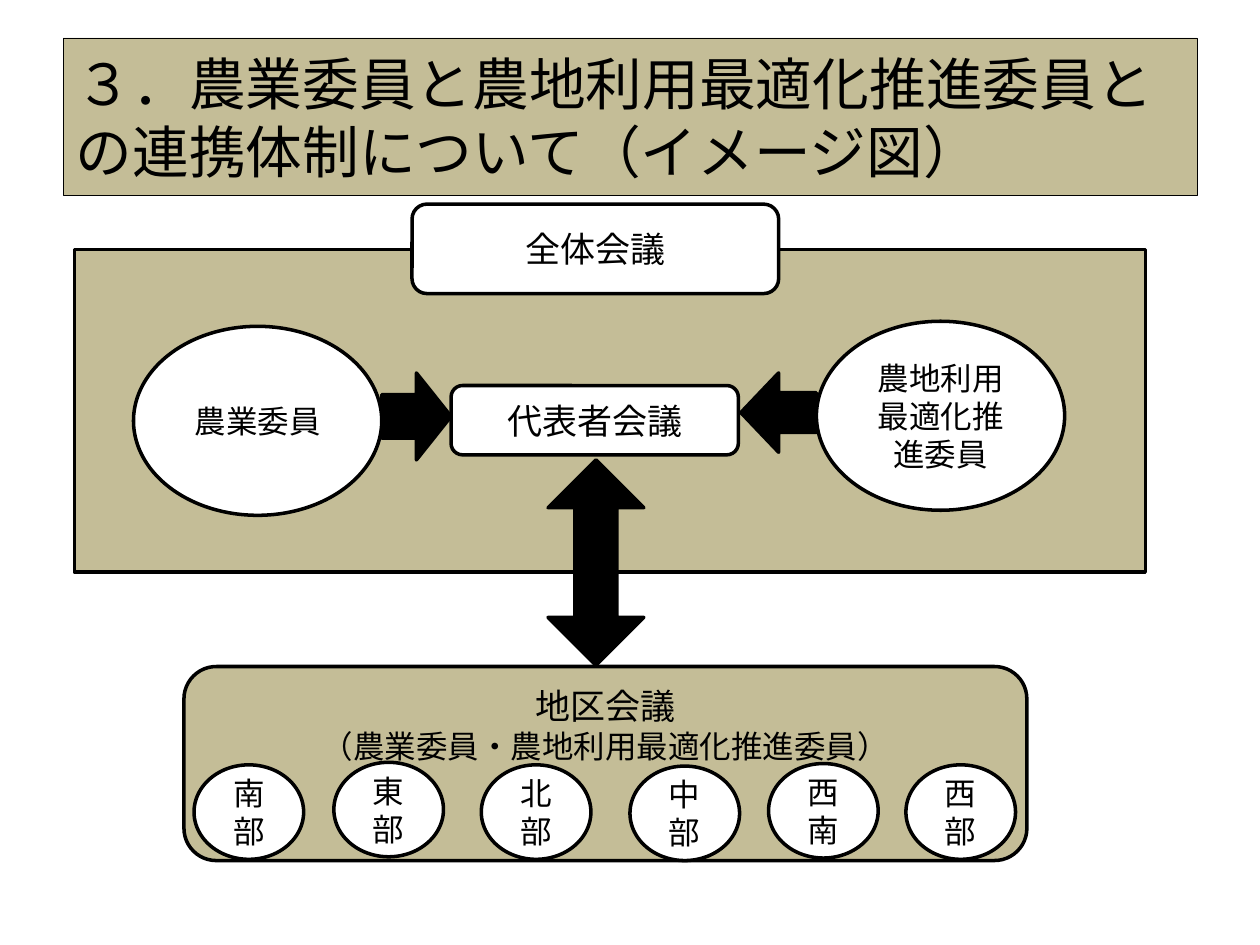
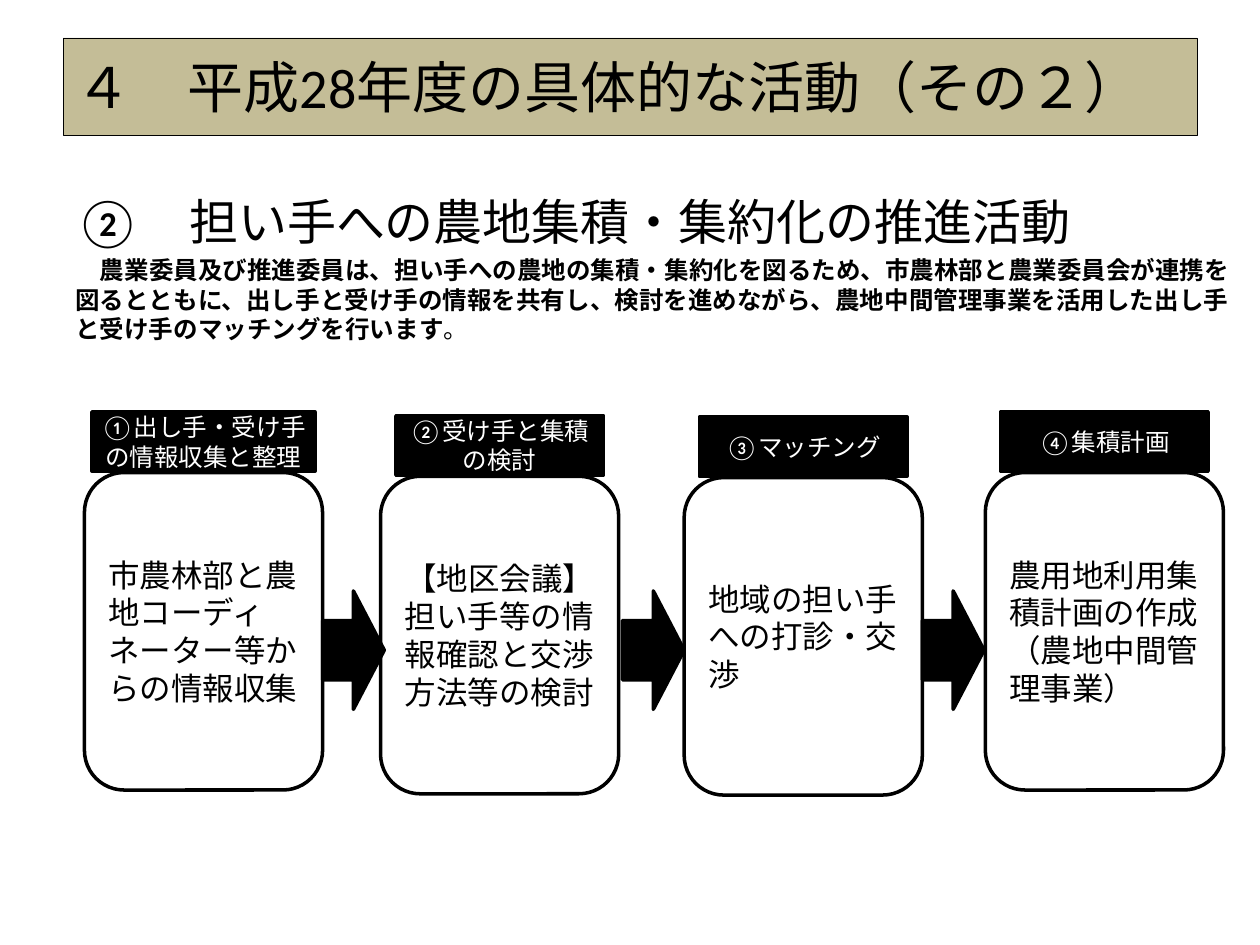
from dataclasses import dataclass

from lxml.etree import SubElement
from pptx import Presentation
from pptx.dml.color import RGBColor
from pptx.enum.lang import MSO_LANGUAGE_ID as Language
from pptx.enum.shapes import MSO_SHAPE as Preset
from pptx.enum.text import MSO_ANCHOR as Anchor, MSO_AUTO_SIZE as AutoSize, PP_ALIGN as Align
from pptx.oxml.ns import qn
from pptx.util import Inches, Pt


@dataclass(frozen=True)
class Theme:
    khaki = RGBColor(0xC4, 0xBD, 0x97)
    black = RGBColor(0, 0, 0)
    white = RGBColor(0xFF, 0xFF, 0xFF)
    latin_font = "Calibri"
    gothic_font = "Noto Sans CJK JP"
    title_line = 0.25
    shape_line = 2
    title_size = 32
    heading_size = 28
    meeting_size = 20
    text_size = 18
    note_size = 14


theme = Theme()
presentation = Presentation()
presentation.slide_width, presentation.slide_height = Inches(10), Inches(7.5)
# The grid has 100 columns and 75 rows of square cells.
CELL = presentation.slide_width // 100


def format_text(paragraph, size, color=theme.black, font=theme.latin_font, align=Align.CENTER):
    paragraph.alignment = align
    for run in paragraph.runs:
        run.font.name = font
        run.font.size = Pt(size)
        run.font.color.rgb = color
        run.font.language_id = Language.JAPANESE
        east_asian = SubElement(run.font._element, qn("a:ea"))
        east_asian.set("typeface", theme.latin_font)


def add_block(slide, preset, box, fill=theme.white, text="", size=theme.text_size,
              **text_style):
    """Draw an outlined preset shape; box is left, top, width, height in grid cells."""
    shape = slide.shapes.add_shape(preset, *[int(cells * CELL) for cells in box])
    shape.shadow.inherit = False
    shape.fill.solid()
    shape.fill.fore_color.rgb = fill
    shape.line.color.rgb = theme.black
    shape.line.width = Pt(theme.shape_line)
    if text:
        shape.text_frame.word_wrap = True
        shape.text_frame.vertical_anchor = Anchor.MIDDLE
        shape.text_frame.text = text
        for paragraph in shape.text_frame.paragraphs:
            format_text(paragraph, size, **text_style)
    return shape


# Both slides with their title bands
titles = [
    ("３．農業委員と農地利用最適化推進委員との連携体制について（イメージ図）", 12.5, 32.4),
    ("４　平成28年度の具体的な活動（その２）", 7.72, theme.title_size),
]
slides = []
for title_text, band_height, title_size in titles:
    slide = presentation.slides.add_slide(presentation.slide_layouts[5])
    title = slide.shapes.title
    title.left, title.top = 5 * CELL, 3 * CELL
    title.width, title.height = 90 * CELL, int(band_height * CELL)
    title.fill.solid()
    title.fill.fore_color.rgb = theme.khaki
    title.line.color.rgb = theme.black
    title.line.width = Pt(theme.title_line)
    title.text_frame.text = title_text
    title.text_frame.word_wrap = True
    title.text_frame.auto_size = AutoSize.NONE
    title.text_frame.vertical_anchor = Anchor.MIDDLE
    format_text(title.text_frame.paragraphs[0], title_size, align=Align.LEFT)
    slides.append(slide)
structure_slide, activity_slide = slides

# Slide 1: district meeting and its six districts
district_meeting = add_block(
    structure_slide, Preset.ROUNDED_RECTANGLE, (14.6, 52.9, 66.9, 15.4), theme.khaki,
    "地区会議\n（農業委員・農地利用最適化推進委員）")
district_meeting.text_frame.vertical_anchor = Anchor.TOP
district_meeting.text_frame.margin_top = Inches(0.07)
meeting_name = district_meeting.text_frame.paragraphs[0].runs[0]
meeting_name.font.size = Pt(theme.meeting_size)
meeting_name.font.name = theme.gothic_font

add_block(structure_slide, Preset.RECTANGLE, (5.9, 19.8, 85, 25.6), theme.khaki)
add_block(structure_slide, Preset.ROUNDED_RECTANGLE, (32.7, 16.2, 29.1, 7.1),
          text="全体会議", size=theme.meeting_size, font=theme.gothic_font)

districts = [("南部", 15.4, 60.7), ("東部", 26.5, 60.5), ("北部", 38.2, 60.7),
             ("中部", 50, 60.8), ("西南", 61, 60.6), ("西部", 71.9, 60.7)]
for district, left, top in districts:
    add_block(structure_slide, Preset.OVAL, (left, top, 8.7, 7.5), text=district)

# Slide 1: members who meet through their representatives
add_block(structure_slide, Preset.RIGHT_ARROW, (30.3, 29.6, 5.5, 6.9), theme.black)
add_block(structure_slide, Preset.LEFT_ARROW, (58.8, 29.6, 6, 6.3), theme.black)
exchange_arrow = add_block(structure_slide, Preset.UP_DOWN_ARROW,
                           (43.5, 36.5, 7.6, 16.3), theme.black)
arrow_guides = exchange_arrow._element.spPr.find(qn("a:prstGeom")).find(qn("a:avLst"))
for guide in list(arrow_guides):
    arrow_guides.remove(guide)
for name, value in [("adj1", 44000), ("adj2", 50000)]:
    SubElement(arrow_guides, qn("a:gd"), name=name, fmla=f"val {value}")
for member, left, top in [("農業委員", 10.6, 25.9), ("農地利用最適化推進委員", 64.8, 25.5)]:
    add_block(structure_slide, Preset.OVAL, (left, top, 19.7, 15), text=member)
add_block(structure_slide, Preset.ROUNDED_RECTANGLE, (35.8, 30.6, 22.8, 5.5),
          text="代表者会議", size=theme.meeting_size, font=theme.gothic_font)

# Slide 2: heading and explanation
body = activity_slide.shapes.add_textbox(
    5 * CELL, int(14.7 * CELL), int(93.8 * CELL), 15 * CELL).text_frame
body.word_wrap = True
heading = body.paragraphs[0]
heading.text = "②　担い手への農地集積・集約化の推進活動"
format_text(heading, theme.heading_size, font=theme.gothic_font, align=Align.LEFT)
explanation = body.add_paragraph()
explanation.space_before = Pt(2.8)
sentence = ("　農業委員及び推進委員は、担い手への農地の集積・集約化を図るため、"
            "市農林部と農業委員会が連携を図るとともに、出し手と受け手の情報を共有し、"
            "検討を進めながら、農地中間管理事業を活用した出し手と受け手のマッチングを行います")
for text, bold in [(sentence, True), ("。", False)]:
    run = explanation.add_run()
    run.text = text
    run.font.bold = bold
format_text(explanation, theme.note_size, font=theme.gothic_font, align=Align.LEFT)

# Slide 2: four steps, each a card under a centred label
CARD_WIDTH, CARD_HEIGHT, LABEL_HEIGHT, LABEL_RISE = 18.9, 25.2, 4.7, 4.8
steps = [
    (6.7, 37.5, 17.7, "①出し手・受け手の情報収集と整理",
     "市農林部と農地コーディネーター等からの情報収集"),
    (30.2, 37.8, 16.5, "②受け手と集積の検討",
     "【地区会議】\n担い手等の情報確認と交渉方法等の検討"),
    (54.3, 37.9, 16.5, "③マッチング", "地域の担い手への打診・交渉"),
    (78.2, 37.5, 16.5, "④集積計画", "農用地利用集積計画の作成（農地中間管理事業）"),
]
for left, top, label_width, label_text, task in steps:
    card = add_block(activity_slide, Preset.ROUNDED_RECTANGLE,
                     (left, top, CARD_WIDTH, CARD_HEIGHT), text=task, align=Align.LEFT)
    if task.startswith("【"):
        card.text_frame.paragraphs[0].alignment = Align.CENTER
    label_left = left + (CARD_WIDTH - label_width) / 2
    label = add_block(activity_slide, Preset.RECTANGLE,
                      (label_left, top - LABEL_RISE, label_width, LABEL_HEIGHT),
                      theme.black, label_text, theme.note_size, color=theme.white)
    label.text_frame.margin_left = label.text_frame.margin_right = Inches(0.07)
for gap in range(len(steps) - 1):
    add_block(activity_slide, Preset.RIGHT_ARROW,
              (25.6 + 23.8 * gap, 46.9, 4.9, 9.4), theme.black)

presentation.save("out.pptx")
